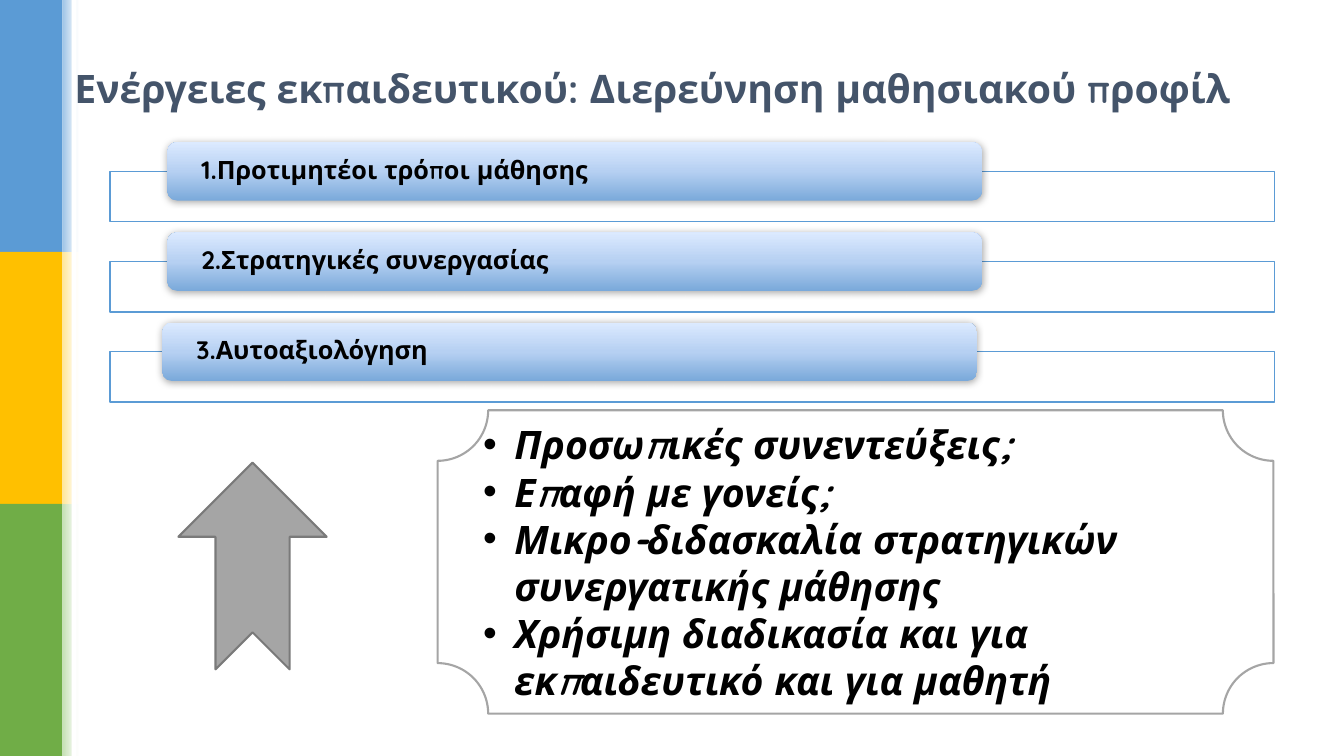
from lxml import etree
from pptx import Presentation
from pptx import util as u
from pptx.dml import color
from pptx.enum import shapes, text
from pptx.oxml import ns


def paint(shape, colours, line=None, width=1, angle=0):
    shape.shadow.inherit = False
    if len(colours) == 1:
        shape.fill.solid()
        shape.fill.fore_color.rgb = color.RGBColor.from_string(colours[0])
    else:
        shape.fill.gradient()
        shape.fill.gradient_angle = angle
        stops = shape._element.spPr.find(".//" + ns.qn("a:gsLst"))
        stops.clear()
        for index, colour in enumerate(colours):
            position = round(100000 * index / (len(colours) - 1))
            stop = etree.SubElement(stops, ns.qn("a:gs"), pos=str(position))
            etree.SubElement(stop, ns.qn("a:srgbClr"), val=colour)
    if line:
        shape.line.color.rgb = color.RGBColor.from_string(line)
        shape.line.width = u.Pt(width)
    else:
        shape.line.fill.background()


def write(shape, lines, size, colour="000000", italic=False, bullet=None, inset=0.1, spacing=1.0):
    frame = shape.text_frame
    frame.word_wrap = True
    frame.vertical_anchor = text.MSO_ANCHOR.MIDDLE
    frame.margin_left = frame.margin_right = u.Inches(inset)
    for index, line in enumerate(lines):
        paragraph = frame.add_paragraph() if index else frame.paragraphs[0]
        paragraph.text = line
        paragraph.alignment = text.PP_ALIGN.LEFT
        paragraph.line_spacing = spacing
        if bullet:
            properties = paragraph._p.get_or_add_pPr()
            properties.set("marL", str(u.Inches(0.31)))
            properties.set("indent", str(u.Inches(-0.31)))
            etree.SubElement(properties, ns.qn("a:buFont"), typeface="Arial")
            etree.SubElement(properties, ns.qn("a:buChar"), char=bullet)
        font = paragraph.runs[0].font
        font.name = "Quicksand"
        font.size = u.Pt(size)
        font.bold = True
        font.italic = italic
        font.color.rgb = color.RGBColor.from_string(colour)


presentation = Presentation()
presentation.slide_width = u.Inches(13.33)
presentation.slide_height = u.Inches(7.5)
slide = presentation.slides.add_slide(presentation.slide_layouts[6])
kinds = shapes.MSO_SHAPE

bands = [("5B9BD5", "9DC3E6"), ("FFC000", "FFE699"), ("70AD47", "C5E0B4")]
for index, (solid, pale) in enumerate(bands):
    top = u.Inches(2.5 * index)
    band = slide.shapes.add_shape(kinds.RECTANGLE, 0, top, u.Inches(0.62), u.Inches(2.5))
    paint(band, [solid])
    edge = slide.shapes.add_shape(kinds.RECTANGLE, u.Inches(0.62), top, u.Inches(0.16), u.Inches(2.5))
    paint(edge, [pale, "FFFFFF"])
margin = slide.shapes.add_shape(kinds.RECTANGLE, u.Inches(0.71), 0, u.Inches(0.05), u.Inches(7.5))
paint(margin, ["FFFFFF"])

title = slide.shapes.add_textbox(u.Inches(0.64), u.Inches(0.25), u.Inches(12), u.Inches(1.25))
write(title, ["Ενέργειες εκπαιδευτικού: Διερεύνηση μαθησιακού προφίλ"], 28, colour="44546A")

steps = [
    ("1.Προτιμητέοι τρόποι μάθησης", 1.66),
    ("2.Στρατηγικές συνεργασίας", 1.66),
    ("3.Αυτοαξιολόγηση", 1.61),
]
for index, (label, left) in enumerate(steps):
    top = 1.41 + 0.895 * index
    frame = slide.shapes.add_shape(
        kinds.RECTANGLE, u.Inches(1.09), u.Inches(top + 0.29), u.Inches(11.55), u.Inches(0.5))
    paint(frame, ["FFFFFF"], line="5B9BD5")
    white = frame._element.spPr.find(ns.qn("a:solidFill"))[0]
    etree.SubElement(white, ns.qn("a:alpha"), val="90000")

    step = slide.shapes.add_shape(
        kinds.ROUNDED_RECTANGLE, u.Inches(left), u.Inches(top), u.Inches(8.08), u.Inches(0.58))
    paint(step, ["7AA9DA", "B6D0F2", "DCEAFF"], angle=90)
    effects = step._element.spPr.find(ns.qn("a:effectLst"))
    shadow = etree.SubElement(
        effects, ns.qn("a:outerShdw"), blurRad=str(u.Pt(5)), dist=str(u.Pt(1)), dir="5400000", rotWithShape="0")
    black = etree.SubElement(shadow, ns.qn("a:srgbClr"), val="000000")
    etree.SubElement(black, ns.qn("a:alpha"), val="32000")
    write(step, [label], 18, inset=0.31, spacing=0.9)

plaque = slide.shapes.add_shape(
    kinds.PLAQUE, u.Inches(4.34), u.Inches(4.07), u.Inches(8.29), u.Inches(3.01))
paint(plaque, ["FFFFFF"], line="A5A5A5", width=1.5)
actions = [
    "Προσωπικές συνεντεύξεις;",
    "Επαφή με γονείς;",
    "Μικρο-διδασκαλία στρατηγικών συνεργατικής μάθησης",
    "Χρήσιμη διαδικασία και για εκπαιδευτικό και για μαθητή",
]
write(plaque, actions, 28, italic=True, bullet="•")

arrow = slide.shapes.add_shape(
    kinds.NOTCHED_RIGHT_ARROW, u.Inches(1.48), u.Inches(4.88), u.Inches(2.05), u.Inches(1.47))
arrow.rotation = 270
paint(arrow, ["A5A5A5"], line="7A7A7A", width=1.5)

presentation.save("out.pptx")
